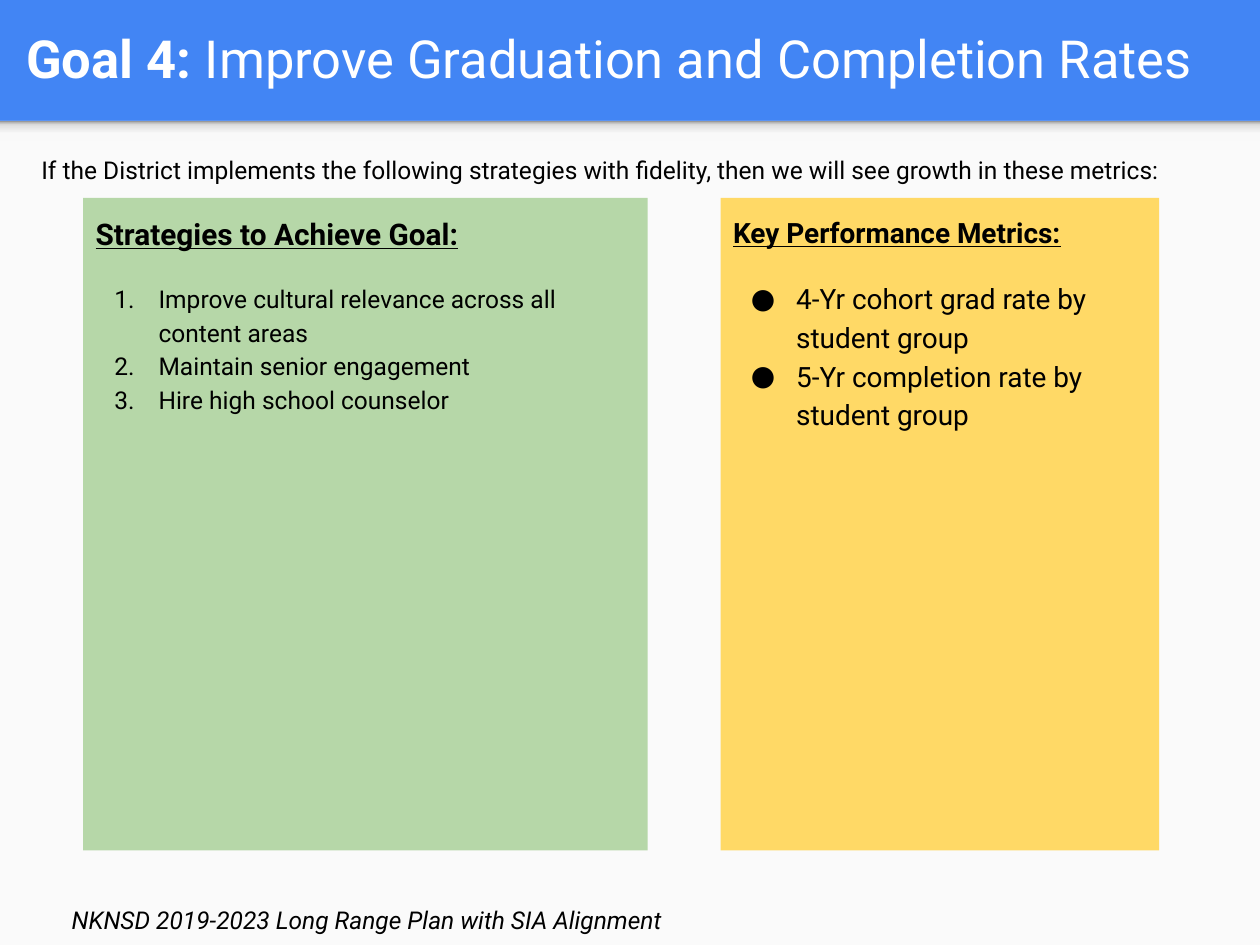
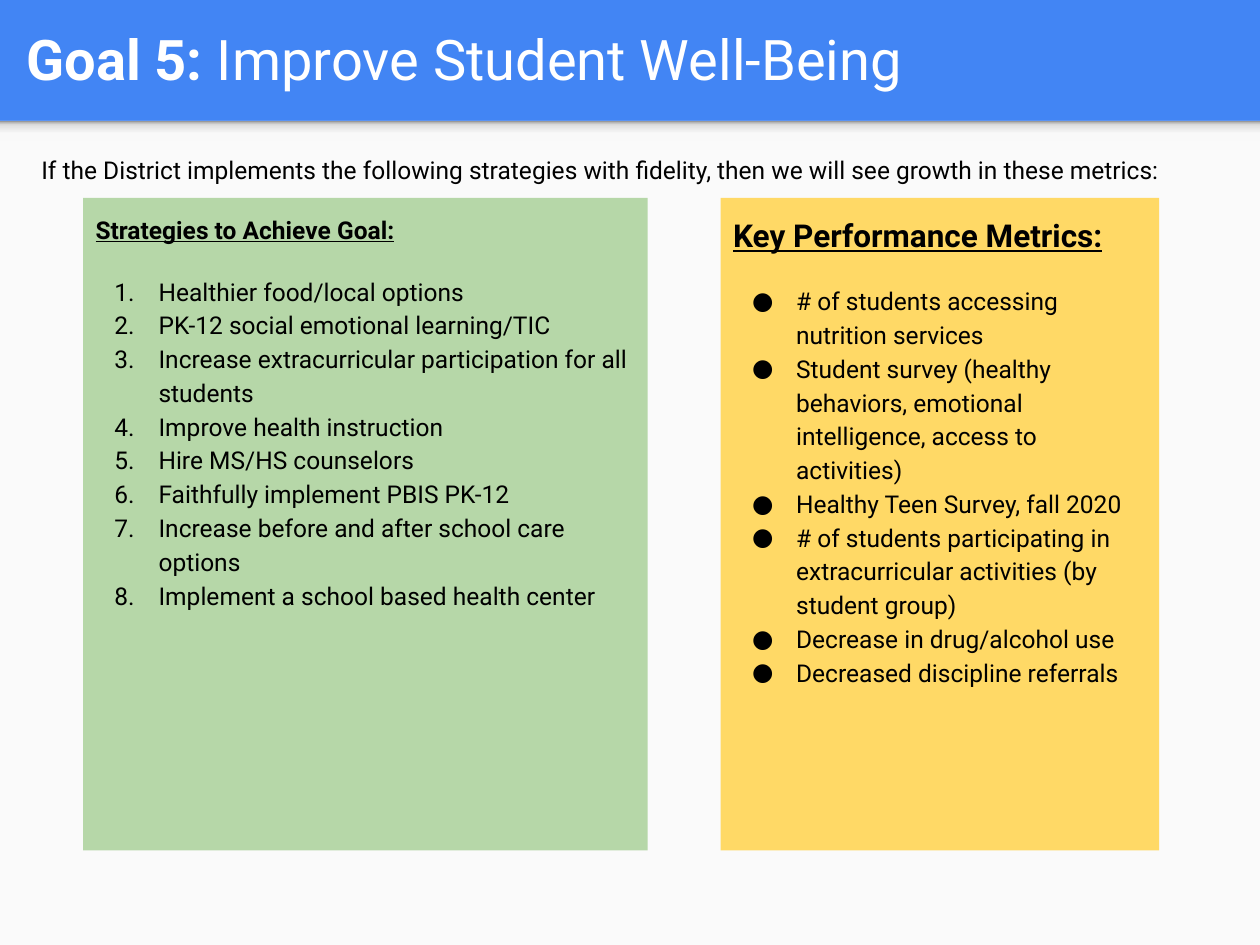
from dataclasses import dataclass

from lxml import etree
from pptx import Presentation
from pptx import util as u
from pptx.dml.color import RGBColor
from pptx.enum import shapes, text
from pptx.oxml import ns

COLOURS = {
    "band": "4285F4",
    "page": "FAFAFA",
    "title": "FFFFFF",
    "body": "000000",
    "strategies": "B6D7A8",
    "metrics": "FFD966",
}
BAND_SHADOW = [(0, "F9F9F9"), (36, "F9F9F9"), (80, "DEDEDE"), (100, "999999")]
FONT = "Roboto"
BAND_HEIGHT = 0.96
PANEL_TOP, PANEL_HEIGHT = 1.57, 5.18
INTRO = ("If the District implements the following strategies with fidelity, "
         "then we will see growth in these metrics:")
NUMBER = ("a:buAutoNum", "type", "arabicPeriod")
DOT = ("a:buChar", "char", "●")


@dataclass
class Panel:
    heading: str
    colour: str
    left: float
    width: float
    bullet: tuple[str, str, str]
    heading_size: int
    items: list[str]
    item_size: int = 14
    hanging: float = 0.35


@dataclass
class Goal:
    label: str
    title: str
    title_size: int
    panels: list[Panel]
    footer: str = ""


def strategies(heading_size: int, items: list[str]) -> Panel:
    return Panel("Strategies to Achieve Goal:", "strategies", 0.66, 4.48,
                 NUMBER, heading_size, items)


def metrics(heading_size: int, items: list[str], **options) -> Panel:
    return Panel("Key Performance Metrics:", "metrics", 5.72, 3.48,
                 DOT, heading_size, items, **options)


GOALS = [
    Goal("Goal 4: ", "Improve Graduation and Completion Rates", 30, [
        strategies(17, [
            "Improve cultural relevance across all content areas",
            "Maintain senior engagement",
            "Hire high school counselor",
        ]),
        metrics(16, [
            "4-Yr cohort grad rate by student group",
            "5-Yr completion rate by student group",
        ], item_size=16, hanging=0.36),
    ], "NKNSD 2019-2023 Long Range Plan with SIA Alignment"),
    Goal("Goal 5: ", "Improve Student Well-Being", 32, [
        strategies(14, [
            "Healthier food/local options",
            "PK-12 social emotional learning/TIC",
            "Increase extracurricular participation for all students",
            "Improve health instruction",
            "Hire MS/HS counselors",
            "Faithfully implement PBIS PK-12",
            "Increase before and after school care options",
            "Implement a school based health center",
        ]),
        metrics(18, [
            "# of students accessing nutrition services",
            "Student survey (healthy behaviors, emotional intelligence, "
            "access to activities)",
            "Healthy Teen Survey, fall 2020",
            "# of students participating in extracurricular activities "
            "(by student group)",
            "Decrease in drug/alcohol use",
            "Decreased discipline referrals",
        ]),
    ]),
]


def rgb(name: str) -> RGBColor:
    return RGBColor.from_string(COLOURS[name])


def add_span(para, words: str, size: int = 14, colour: str = "body",
             bold: bool = False, italic: bool = False,
             underline: bool = False) -> None:
    span = para.add_run()
    span.text = words
    font = span.font
    font.name, font.size = FONT, u.Pt(size)
    font.bold, font.italic, font.underline = bold, italic, underline
    font.color.rgb = rgb(colour)


def set_frame(box, anchor=text.MSO_ANCHOR.TOP):
    frame = box.text_frame
    frame.word_wrap = True
    frame.vertical_anchor = anchor
    frame.margin_left = frame.margin_right = u.Inches(0.1)
    frame.margin_top = frame.margin_bottom = u.Inches(0.1)
    return frame


def add_text(page, left: float, top: float, width: float, height: float,
             anchor=text.MSO_ANCHOR.TOP):
    box = page.shapes.add_textbox(*map(u.Inches, (left, top, width, height)))
    return set_frame(box, anchor).paragraphs[0]


def add_rectangle(page, left: float, top: float, width: float, height: float,
                  colour: str):
    box = page.shapes.add_shape(shapes.MSO_SHAPE.RECTANGLE,
                                *map(u.Inches, (left, top, width, height)))
    box.shadow.inherit = False
    box.line.fill.background()
    box.fill.solid()
    box.fill.fore_color.rgb = rgb(colour)
    return box


def add_band_shadow(page) -> None:
    box = add_rectangle(page, 0, BAND_HEIGHT, 10, 0.16, "page")
    box.fill.gradient()
    gradient = box.fill._xPr.find(ns.qn("a:gradFill"))
    stops = gradient.find(ns.qn("a:gsLst"))
    for stop in list(stops):
        stops.remove(stop)
    for position, colour in BAND_SHADOW:
        stop = etree.SubElement(stops, ns.qn("a:gs"), pos=str(position * 1000))
        etree.SubElement(stop, ns.qn("a:srgbClr"), val=colour)
    gradient.find(ns.qn("a:lin")).set("ang", str(270 * 60000))


def set_bullet(para, bullet: tuple[str, str, str], hanging: float) -> None:
    tag, attribute, value = bullet
    properties = para._p.get_or_add_pPr()
    properties.set("marL", str(u.Inches(0.5)))
    properties.set("indent", str(-u.Inches(hanging)))
    colour = etree.SubElement(properties, ns.qn("a:buClr"))
    etree.SubElement(colour, ns.qn("a:srgbClr"), val=COLOURS["body"])
    etree.SubElement(properties, ns.qn("a:buFont"), typeface=FONT)
    etree.SubElement(properties, ns.qn(tag)).set(attribute, value)


def add_panel(page, panel: Panel) -> None:
    box = add_rectangle(page, panel.left, PANEL_TOP, panel.width, PANEL_HEIGHT,
                        panel.colour)
    frame = set_frame(box)
    heading = frame.paragraphs[0]
    add_span(heading, panel.heading, size=panel.heading_size, bold=True,
             underline=True)
    for item in panel.items:
        add_span(frame.add_paragraph(), item, size=panel.item_size)
    for para in frame.paragraphs:
        para.alignment = text.PP_ALIGN.LEFT
        para.line_spacing = 1.15
    bulleted = frame.paragraphs[1:]
    bulleted[0].space_before = u.Pt(16)
    for para in bulleted:
        set_bullet(para, panel.bullet, panel.hanging)


def add_goal(deck, goal: Goal) -> None:
    page = deck.slides.add_slide(deck.slide_layouts[6])
    add_rectangle(page, 0, BAND_HEIGHT, 10, 7.5 - BAND_HEIGHT, "page")
    add_band_shadow(page)
    title = add_text(page, 0.11, 0.02, 9.65, 0.88, text.MSO_ANCHOR.MIDDLE)
    add_span(title, goal.label, size=goal.title_size, colour="title", bold=True)
    add_span(title, goal.title, size=goal.title_size, colour="title")
    for panel in goal.panels:
        add_panel(page, panel)
    add_span(add_text(page, 0.23, 1.13, 9.37, 0.44), INTRO)
    if goal.footer:
        add_span(add_text(page, 0.47, 7.08, 8.88, 0.35), goal.footer,
                 italic=True)


def main() -> None:
    deck = Presentation()
    deck.slide_width, deck.slide_height = u.Inches(10), u.Inches(7.5)
    backdrop = deck.slide_master.background.fill
    backdrop.solid()
    backdrop.fore_color.rgb = rgb("band")
    for goal in GOALS:
        add_goal(deck, goal)
    deck.save("out.pptx")


if __name__ == "__main__":
    main()
